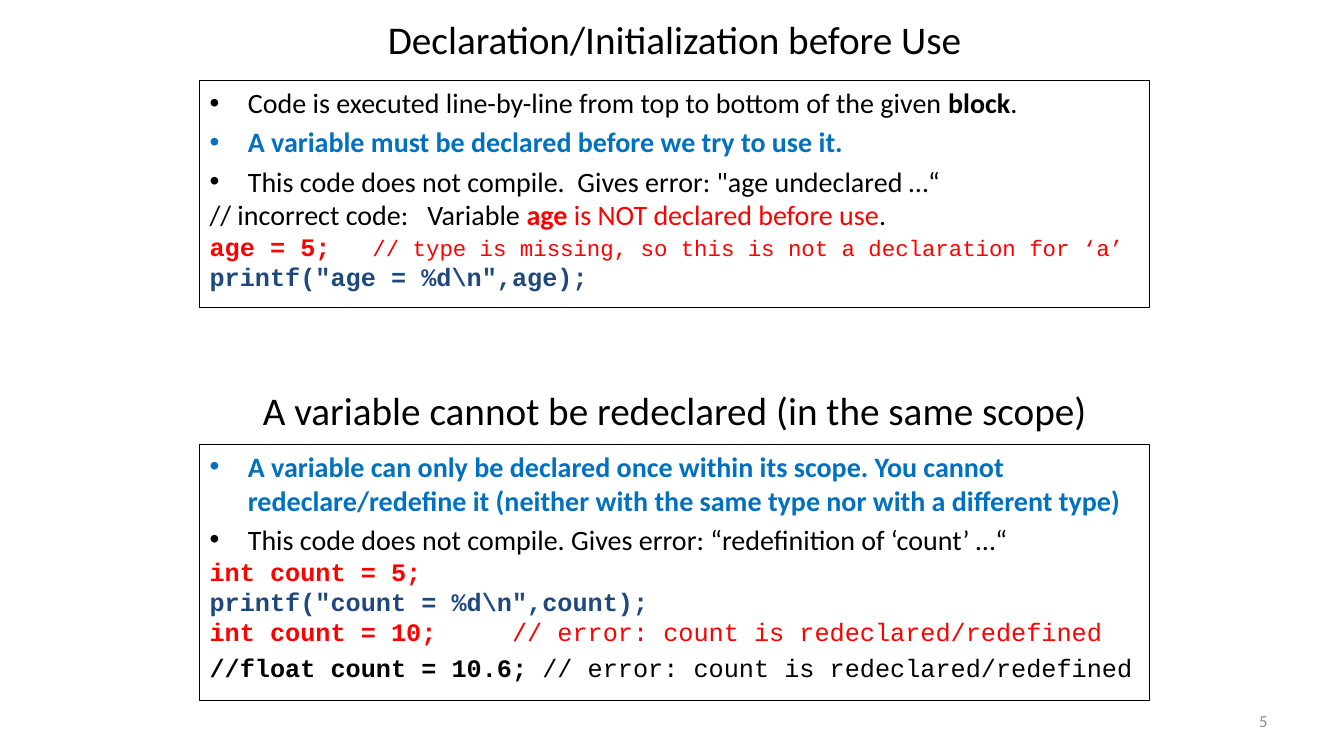
"""Build a slide on declaring C variables before use and only once per scope."""
import pptx
import pptx.util
import pptx.dml.color
import pptx.enum.shapes
import pptx.enum.text
import pptx.oxml
from pptx.oxml.ns import nsdecls

Inches, Pt = pptx.util.Inches, pptx.util.Pt
ALIGN = pptx.enum.text.PP_ALIGN
ANCHOR = pptx.enum.text.MSO_ANCHOR

THEME = {
    "body": "Calibri", "code": "Courier New",
    "black": "000000", "blue": "0070C0", "red": "FF0000",
    "navy": "1F497D", "gray": "8C8C8C",
    "title_size": 28, "text_size": 20, "code_size": 18, "small_size": 16, "number_size": 12,
    "border": 0.75, "indent": 0.38, "bullet_gap": 4,
}


def style(font, size, color, bold=False):
    return {"name": THEME[font], "size": Pt(THEME[size]), "bold": bold, "color": THEME[color]}


STYLES = {
    "title": style("body", "title_size", "black"),
    "number": style("body", "number_size", "gray"),
    "text": style("body", "text_size", "black"),
    "strong": style("body", "text_size", "black", True),
    "key": style("body", "text_size", "blue", True),
    "alert": style("body", "text_size", "red"),
    "alert_strong": style("body", "text_size", "red", True),
    "bad_code": style("code", "code_size", "red", True),
    "bad_note": style("code", "code_size", "red"),
    "small_note": style("code", "small_size", "red"),
    "call": style("code", "code_size", "navy", True),
    "off_code": style("code", "code_size", "black", True),
    "off_note": style("code", "code_size", "black"),
}

SECTIONS = [
    {"title": "Declaration/Initialization before Use",
     "title_top": 0.12, "box_top": 0.8, "box_height": 2.25,
     "lines": [
         ("bullet", [("Code is executed line-by-line from top to bottom of the given ", "text"),
                     ("block", "strong"), (".", "text")]),
         ("bullet", [("A variable must be declared before we try to use it.", "key")]),
         ("bullet", [('This code does not compile.  Gives error: "age undeclared …“', "text")]),
         ("plain", [("// incorrect code:   Variable ", "text"), ("age", "alert_strong"),
                    (" is NOT declared before use", "alert"), (".", "text")]),
         ("plain", [("age = 5; ", "bad_code"),
                    ("  // type is missing, so this is not a declaration for ‘a’", "small_note")]),
         ("plain", [('printf("age = %d\\n",age);', "call")]),
     ]},
    {"title": "A variable cannot be redeclared (in the same scope)",
     "title_top": 3.8, "box_top": 4.41, "box_height": 2.54,
     "lines": [
         ("bullet", [("A variable can only be declared once within its scope. You cannot "
                      "redeclare/redefine it (neither with the same type nor with a "
                      "different type)", "key")]),
         ("bullet", [("This code does not compile. Gives error: “redefinition of ‘count’ …“",
                      "text")]),
         ("plain", [("int count = 5;", "bad_code")]),
         ("plain", [('printf("count = %d\\n",count);', "call")]),
         ("plain", [("int count = 10;     ", "bad_code"),
                    ("// error: count is redeclared/redefined", "bad_note")]),
         ("spaced", [("//float count = 10.6; ", "off_code"),
                     ("// error: count is redeclared/redefined", "off_note")]),
     ]},
]
LEFT, WIDTH, TITLE_HEIGHT = 1.98, 9.42, 0.53
NUMBER = ("5", (9.56, 6.95, 3.11, 0.4))


def color(value):
    return pptx.dml.color.RGBColor.from_string(value)


def add_run(p, text, name):
    r = p.add_run()
    r.text = text
    for key, value in STYLES[name].items():
        if key == "color":
            r.font.color.rgb = color(value)
        else:
            setattr(r.font, key, value)


def add_label(s, text, name, box, align):
    tf = s.shapes.add_textbox(*map(Inches, box)).text_frame
    tf.word_wrap = True
    tf.vertical_anchor = ANCHOR.MIDDLE
    p = tf.paragraphs[0]
    p.alignment = align
    add_run(p, text, name)


def add_bullet(p):
    pPr = p._p.get_or_add_pPr()
    indent = Inches(THEME["indent"])
    pPr.set("marL", str(indent))
    pPr.set("indent", str(-indent))
    for tag in ('<a:buFont %s typeface="Arial"/>', '<a:buChar %s char="•"/>'):
        pPr.append(pptx.oxml.parse_xml(tag % nsdecls("a")))


def add_panel(s, section):
    box = (LEFT, section["box_top"], WIDTH, section["box_height"])
    sp = s.shapes.add_shape(pptx.enum.shapes.MSO_SHAPE.RECTANGLE, *map(Inches, box))
    sp.shadow.inherit = False
    sp.fill.background()
    sp.line.color.rgb = color(THEME["black"])
    sp.line.width = Pt(THEME["border"])
    tf = sp.text_frame
    tf.word_wrap = True
    tf.vertical_anchor = ANCHOR.TOP
    for i, (kind, runs) in enumerate(section["lines"]):
        p = tf.add_paragraph() if i else tf.paragraphs[0]
        p.alignment = ALIGN.LEFT
        p.space_before = Pt(0 if kind == "plain" else THEME["bullet_gap"])
        if kind == "bullet":
            add_bullet(p)
        for text, name in runs:
            add_run(p, text, name)


def main():
    prs = pptx.Presentation()
    prs.slide_width, prs.slide_height = Inches(13.33), Inches(7.5)
    s = prs.slides.add_slide(prs.slide_layouts[6])
    for section in SECTIONS:
        title_box = (LEFT, section["title_top"], WIDTH, TITLE_HEIGHT)
        add_label(s, section["title"], "title", title_box, ALIGN.CENTER)
        add_panel(s, section)
    text, box = NUMBER
    add_label(s, text, "number", box, ALIGN.RIGHT)
    prs.save("out.pptx")


if __name__ == "__main__":
    main()
